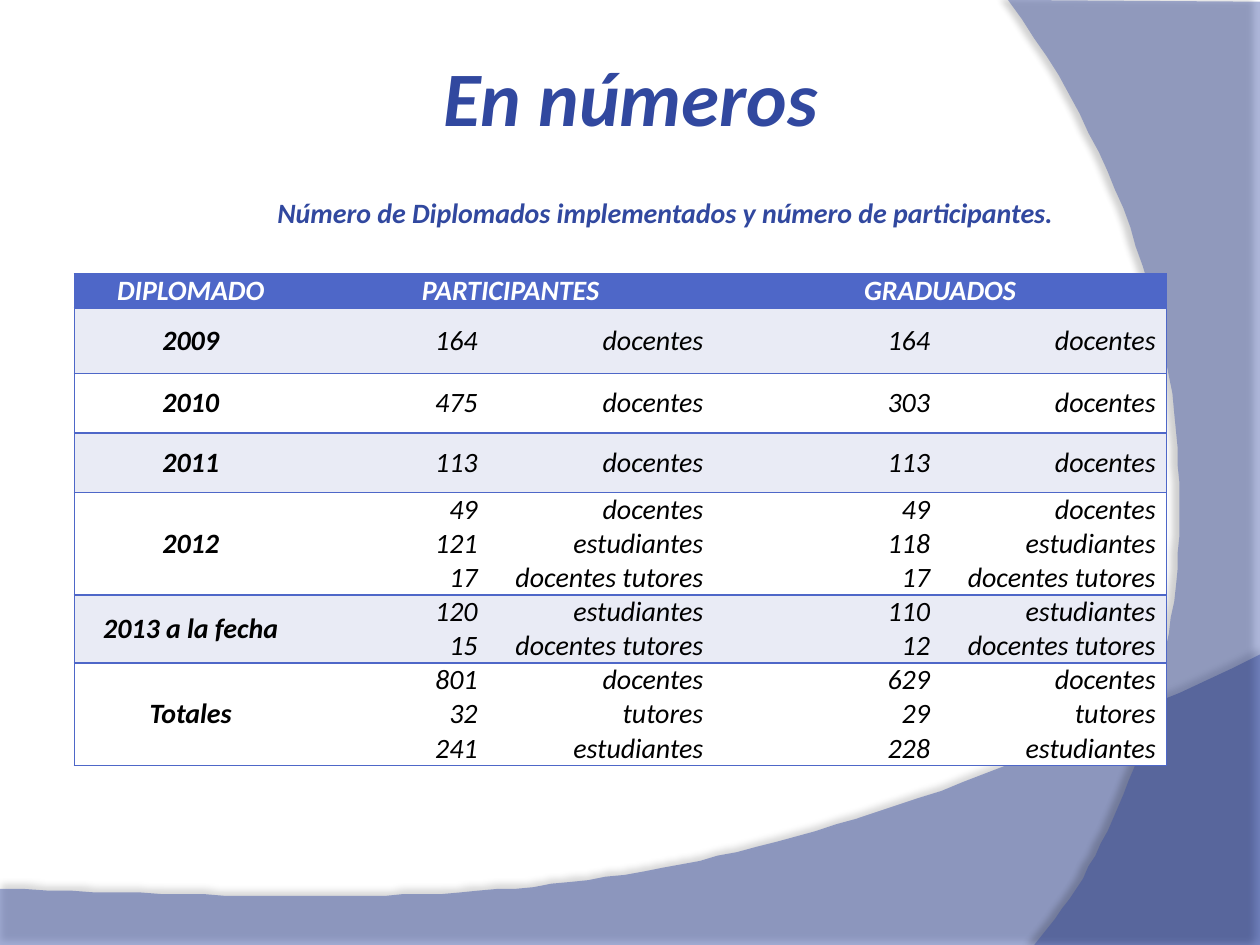
from lxml.etree import SubElement
from pptx import Presentation
from pptx.dml.color import RGBColor
from pptx.enum.text import MSO_ANCHOR as Anchor, PP_ALIGN as Align
from pptx.oxml import parse_xml
from pptx.oxml.ns import nsdecls, qn
from pptx.util import Pt

BLUE, BORDER, BAND, WHITE, BLACK = "31489F", "4E67C8", "E9EBF5", "FFFFFF", "000000"


def color(value):
    return RGBColor.from_string(value)


def write(para, text, size=16, ink=BLACK, bold=True, align=Align.CENTER):
    para.alignment = align
    span = para.add_run()
    span.text = text
    font = span.font
    font.name, font.size, font.bold, font.italic = "Calibri", Pt(size), bold, True
    font.color.rgb = color(ink)


def curve(start, first, second, end, steps=60):
    """Points along a cubic curve, without its start."""
    points = []
    for step in range(1, steps + 1):
        t = step / steps
        u = 1 - t
        weights = (u**3, 3 * u * u * t, 3 * u * t * t, t**3)
        corners = (start, first, second, end)
        points.append(tuple(sum(w * c[axis] for w, c in zip(weights, corners))
                            for axis in (0, 1)))
    return points


class SlideBuilder:
    inset = 5

    def __init__(self, deck):
        self.page = deck.slides.add_slide(deck.slide_layouts[5])
        self.shapes = self.page.shapes

    def wave(self, points, opacity, shade, distance, direction):
        """Translucent shape with a soft shadow, behind everything else."""
        pen = self.shapes.build_freeform(*points[0], scale=float(Pt(1)))
        pen.add_line_segments(points[1:], close=True)
        shape = pen.convert_to_shape()
        shape.fill.solid()
        shape.fill.fore_color.rgb = color(BLUE)
        shape.line.fill.background()
        fill = shape._element.spPr.find(qn("a:solidFill"))
        SubElement(fill[0], qn("a:alpha"), val=str(opacity * 1000))
        shape._element.spPr.append(parse_xml(
            f'<a:effectLst {nsdecls("a")}><a:outerShdw blurRad="{Pt(4)}" '
            f'dist="{Pt(distance)}" dir="{direction * 60000}" algn="ctr" rotWithShape="0">'
            f'<a:srgbClr val="{BLACK}"><a:alpha val="{shade * 1000}"/></a:srgbClr>'
            '</a:outerShdw></a:effectLst>'))

    def title(self, text, left, top, width, height):
        box = self.shapes.title
        box.left, box.top, box.width, box.height = map(Pt, (left, top, width, height))
        box.text_frame.vertical_anchor = Anchor.MIDDLE
        write(box.text_frame.paragraphs[0], text, size=44, ink=BLUE)
        self.shapes._spTree.append(box._element)  # in front of the waves

    def caption(self, text, left, top, width, height):
        box = self.shapes.add_textbox(*map(Pt, (left, top, width, height)))
        frame = box.text_frame
        frame.word_wrap = True
        frame.vertical_anchor = Anchor.TOP
        frame.margin_top, frame.margin_bottom = Pt(10), 0
        write(frame.paragraphs[0], text, ink=BLUE)

    def borders(self, cell, sides):
        props = cell._tc.get_or_add_tcPr()
        for index, side in enumerate("LRTB"):
            paint = (f'<a:solidFill><a:srgbClr val="{BORDER}"/></a:solidFill>'
                     if side in sides else "<a:noFill/>")
            props.insert(index, parse_xml(
                f'<a:ln{side} {nsdecls("a")} w="{Pt(1)}">{paint}</a:ln{side}>'))

    def counts(self, para, number, label, width):
        """A number and its label, each on a right-aligned tab stop."""
        write(para, f"\t{number}\t{label}", bold=False, align=Align.LEFT)
        edge = width - 2 * self.inset - 1
        stops = SubElement(para._p.get_or_add_pPr(), qn("a:tabLst"))
        for place in (edge - 129, edge):
            SubElement(stops, qn("a:tab"), pos=str(Pt(place)), algn="r")

    def table(self, header, rows, left, top, widths, heights):
        frame = self.shapes.add_table(len(rows) + 1, len(widths), Pt(left), Pt(top),
                                      Pt(sum(widths)), Pt(sum(heights)))
        table = frame.table
        table.first_row = table.horz_banding = False
        for column, width in zip(table.columns, widths):
            column.width = Pt(width)
        for line, height in zip(table.rows, heights):
            line.height = Pt(height)

        for r, row in enumerate([header] + rows):
            for c, content in enumerate(row):
                cell = table.cell(r, c)
                cell.vertical_anchor = Anchor.MIDDLE
                cell.margin_left = cell.margin_right = Pt(self.inset)
                cell.margin_top = cell.margin_bottom = 0
                cell.fill.solid()
                cell.fill.fore_color.rgb = color(
                    BORDER if r == 0 else BAND if r % 2 else WHITE)
                self.borders(cell, "TB" + ("L", "", "R")[c])
                text = cell.text_frame
                if isinstance(content, str):
                    write(text.paragraphs[0], content, ink=BLACK if r else WHITE)
                    continue
                for i, (number, label) in enumerate(content):
                    para = text.add_paragraph() if i else text.paragraphs[0]
                    self.counts(para, number, label, widths[c])


def main():
    deck = Presentation()
    deck.slide_width, deck.slide_height = Pt(720), Pt(540)
    slide = SlideBuilder(deck)

    # Background waves
    bottom = [(0, 507.6), (0, 540), (720, 540), (720, 374.4)]
    slide.wave(bottom + curve(bottom[-1], (402.5, 524.9), (281.5, 517.7), bottom[0]),
               opacity=45, shade=35, distance=3.5, direction=270)
    side = [(720, 1.4), (720, 540), (591.1, 540)]
    slide.wave(side + curve(side[-1], (673.2, 445.7), (733, 216), (576, 0)),
               opacity=40, shade=45, distance=4, direction=180)

    # Headings
    slide.title("En números", 36.5, 9.5, 648, 90)
    slide.caption("Número de Diplomados implementados y número de participantes.",
                  111, 102, 538.5, 42.5)

    # Participants and graduates by year
    teachers, students, tutors = "docentes", "estudiantes", "docentes tutores"
    groups = [
        ("2009", (teachers,), (164,), (164,)),
        ("2010", (teachers,), (475,), (303,)),
        ("2011", (teachers,), (113,), (113,)),
        ("2012", (teachers, students, tutors), (49, 121, 17), (49, 118, 17)),
        ("2013 a la fecha", (students, tutors), (120, 15), (110, 12)),
        ("Totales", (teachers, "tutores", students), (801, 32, 241), (629, 29, 228)),
    ]
    rows = [(year, list(zip(joined, labels)), list(zip(graduated, labels)))
            for year, labels, joined, graduated in groups]
    slide.table(("DIPLOMADO", "PARTICIPANTES", "GRADUADOS"), rows, 42.5, 156.5,
                widths=(133, 232.5, 258.5),
                heights=(19.5, 37.5, 34, 34, 58.5, 39, 58.5))

    deck.save("out.pptx")


if __name__ == "__main__":
    main()
